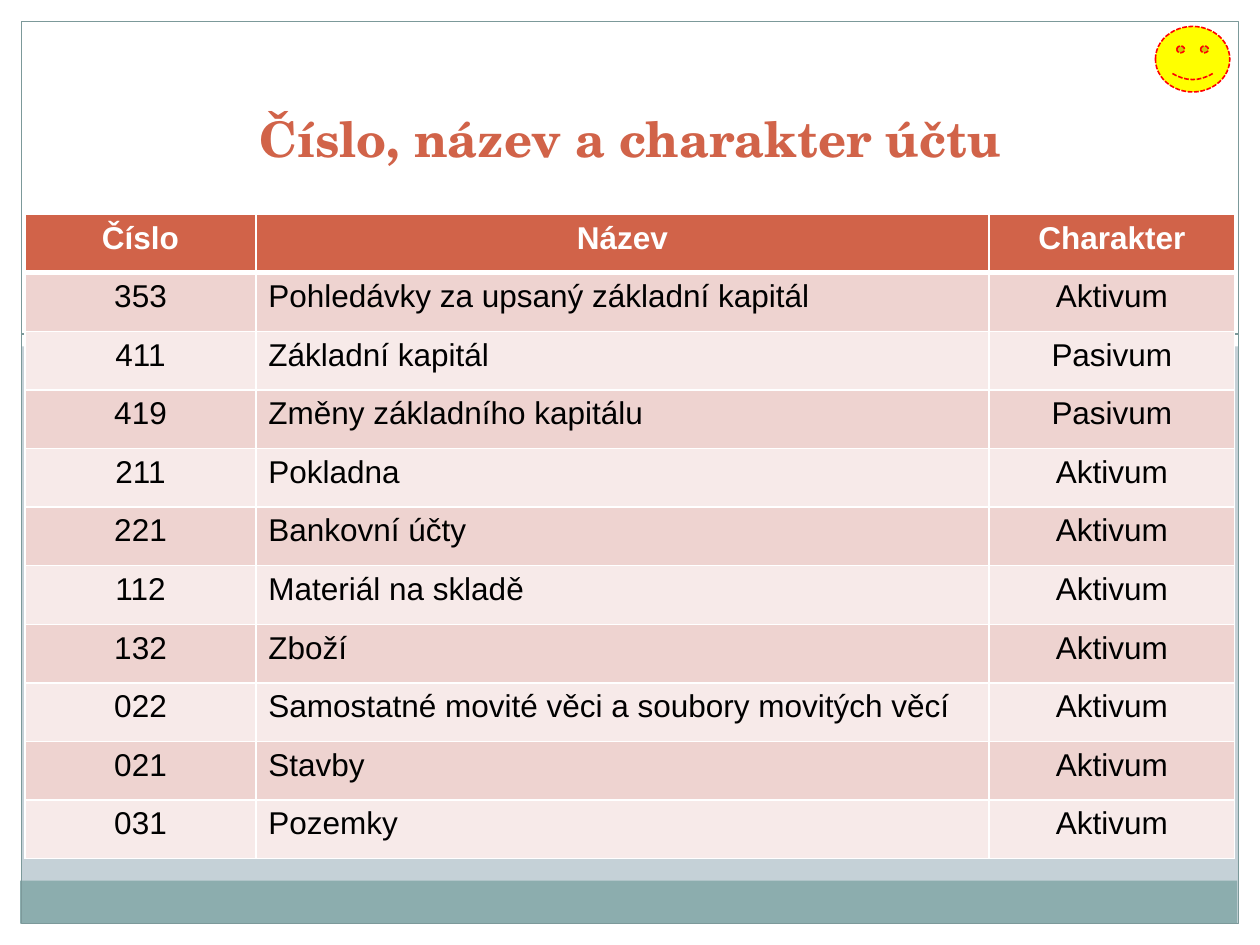
import lxml.etree
import pptx
import pptx.dml.color
import pptx.enum.dml
import pptx.enum.shapes
import pptx.enum.text
import pptx.oxml.ns
import pptx.util

SHAPE = pptx.enum.shapes.MSO_SHAPE
ALIGN = pptx.enum.text.PP_ALIGN
DASH = pptx.enum.dml.MSO_LINE.SQUARE_DOT
qn = pptx.oxml.ns.qn


def color(code):
    return pptx.dml.color.RGBColor.from_string(code)


class Deck:
    """Slide style and drawing methods on a grid of 100 columns by 75 rows."""

    white, black, back = "FFFFFF", "000000", "C5D1D7"
    rust, teal, edge = "D16349", "8CADAE", "7C999A"
    bands = ("EED3D0", "F7EAE9")
    head, body = "TeX Gyre Schola", "Arial"

    def __init__(self):
        self.file = pptx.Presentation()
        self.file.slide_width = pptx.util.Inches(10)
        self.file.slide_height = pptx.util.Inches(7.5)
        self.col = self.file.slide_width / 100
        self.row = self.file.slide_height / 75
        self.slide = self.file.slides.add_slide(self.file.slide_layouts[6])
        fill = self.slide.background.fill
        fill.solid()
        fill.fore_color.rgb = color(self.back)

    def place(self, x, y, w, h):
        return (round(x * self.col), round(y * self.row),
                round(w * self.col), round(h * self.row))

    def stroke(self, line, code, width, dash=None):
        line.color.rgb = color(code)
        line.width = pptx.util.Pt(width)
        if dash:
            line.dash_style = dash

    def shape(self, box, fill=None, line=None, kind=SHAPE.RECTANGLE):
        item = self.slide.shapes.add_shape(kind, *self.place(*box))
        item.shadow.inherit = False
        if fill:
            item.fill.solid()
            item.fill.fore_color.rgb = color(fill)
        else:
            item.fill.background()
        if line:
            self.stroke(item.line, *line)
        else:
            item.line.fill.background()

    def rule(self, x, y, end, line):
        left, top, wide, _ = self.place(x, y, end - x, 0)
        item = self.slide.shapes.add_connector(
            pptx.enum.shapes.MSO_CONNECTOR.STRAIGHT, left, top, left + wide, top)
        self.stroke(item.line, *line)
        lxml.etree.SubElement(item.element.spPr, qn("a:effectLst"))

    def label(self, frame, text, size, face, code, bold, align):
        frame.text = text
        para = frame.paragraphs[0]
        para.alignment = align
        font = para.runs[0].font
        font.size, font.name, font.bold = pptx.util.Pt(size), face, bold
        font.color.rgb = color(code)

    def title(self, box, text):
        frame = self.slide.shapes.add_textbox(*self.place(*box)).text_frame
        frame.word_wrap = True
        frame.vertical_anchor = pptx.enum.text.MSO_ANCHOR.BOTTOM
        self.label(frame, text, 28, self.head, self.rust, True, ALIGN.CENTER)

    def border(self, cell, side, width):
        line = lxml.etree.SubElement(cell._tc.get_or_add_tcPr(), qn("a:ln" + side),
                                     w=str(pptx.util.Pt(width)))
        fill = lxml.etree.SubElement(line, qn("a:solidFill"))
        lxml.etree.SubElement(fill, qn("a:srgbClr"), val=self.white)

    def cell(self, cell, text, row, align):
        top = row == 0
        for side in "LRTB":
            thick = (side == "B" and top) or (side == "T" and row == 1)
            self.border(cell, side, 3 if thick else 1)
        cell.fill.solid()
        cell.fill.fore_color.rgb = color(self.rust if top else self.bands[(row - 1) % 2])
        self.label(cell.text_frame, text, 18, self.body,
                   self.white if top else self.black, top, align)

    def table(self, x, y, high, wide, rows):
        box = self.place(x, y, sum(wide), high * len(rows))
        grid = self.slide.shapes.add_table(len(rows), len(wide), *box).table
        for col, width in zip(grid.columns, wide):
            col.width = round(width * self.col)
        for r, data in enumerate(rows):
            grid.rows[r].height = round(high * self.row)
            for c, text in enumerate(data):
                align = ALIGN.LEFT if r and c == 1 else ALIGN.CENTER
                self.cell(grid.cell(r, c), text, r, align)


def main():
    deck = Deck()
    rows = [
        ("Číslo", "Název", "Charakter"),
        ("353", "Pohledávky za upsaný základní kapitál", "Aktivum"),
        ("411", "Základní kapitál", "Pasivum"),
        ("419", "Změny základního kapitálu", "Pasivum"),
        ("211", "Pokladna", "Aktivum"),
        ("221", "Bankovní účty", "Aktivum"),
        ("112", "Materiál na skladě", "Aktivum"),
        ("132", "Zboží", "Aktivum"),
        ("022", "Samostatné movité věci a soubory movitých věcí", "Aktivum"),
        ("021", "Stavby", "Aktivum"),
        ("031", "Pozemky", "Aktivum"),
    ]
    gap = 1.7
    sides = [(0, 75 - gap, 100, gap), (100 - gap, 0, gap, 75),
             (0, 0, gap, 75), (0, 0, 100, 27.5)]
    for box in sides:
        deck.shape(box, deck.white)
    deck.shape((1.6, 69.9, 96.6, 3.4), deck.teal)
    deck.rule(gap, 26.5, 100 - gap, (deck.edge, 0.9, DASH))
    deck.shape((gap, gap, 100 - 2 * gap, 75 - 2 * gap), line=(deck.edge, 0.75))
    deck.title((7.5, 3.6, 85, 10.2), "Číslo, název a charakter účtu")
    deck.table(2, 17, 4.65, (18.3, 58.2, 19.5), rows)
    deck.shape((91.7, 2.1, 5.9, 5.2), "FFFF00", ("FF0000", 0.9, DASH), SHAPE.SMILEY_FACE)
    deck.file.save("out.pptx")


if __name__ == "__main__":
    main()
